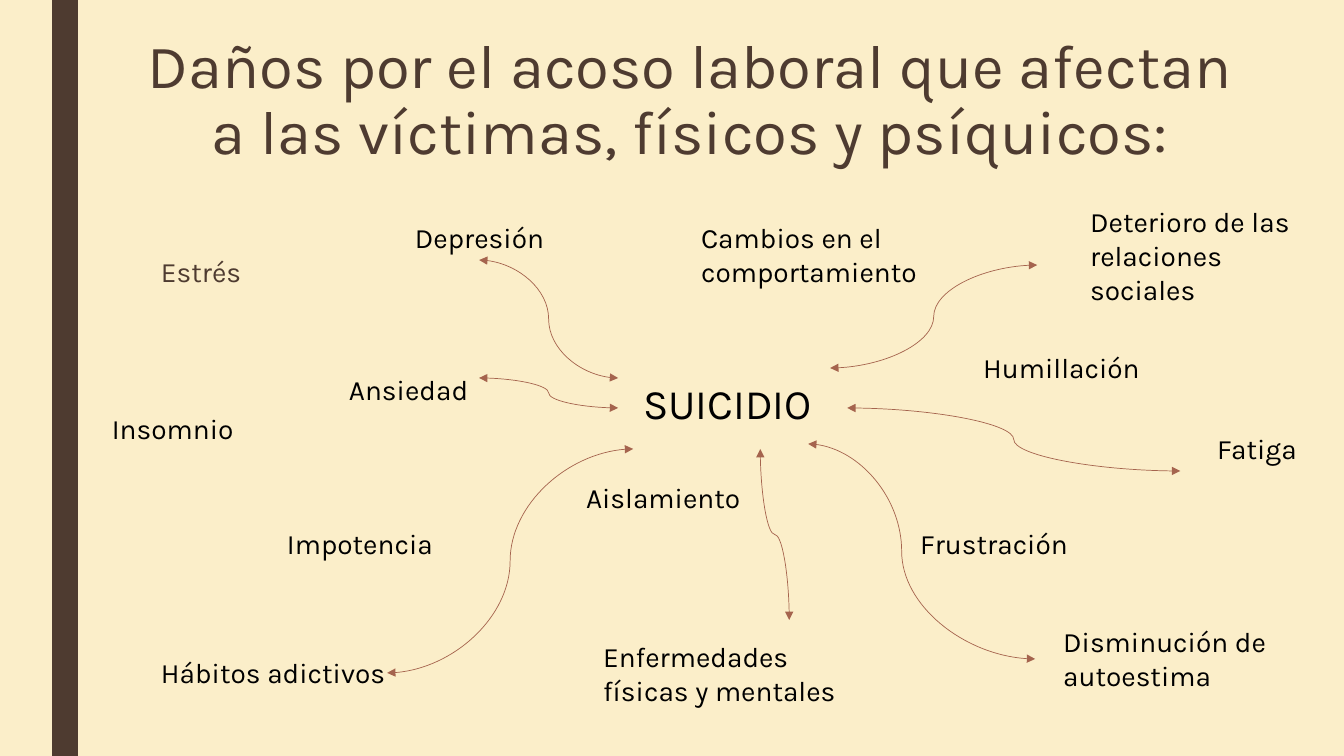
from lxml import etree
from pptx import Presentation
from pptx import util as u
from pptx.dml import color
from pptx.enum import shapes, text
from pptx.oxml import ns

COLORS = {"cream": "FBEEC9", "brown": "4E3B30", "rust": "A5644E", "black": "000000"}
WIDTH, HEIGHT = 1344, 756
LABEL_WIDTH = 254
LABELS = [
    ("Ansiedad", 339, 368),
    ("Humillación", 973, 346),
    ("Disminución de autoestima", 1053, 620),
    ("Fatiga", 1207, 427),
    ("Insomnio", 102, 407),
    ("Impotencia", 277, 522),
    ("Frustración", 910, 522),
    ("Depresión", 405, 216),
    ("Deterioro de las relaciones sociales", 1080, 200),
    ("Aislamiento", 576, 476),
    ("Cambios en el comportamiento", 691, 216),
    ("Hábitos adictivos", 151, 651),
    ("Enfermedades físicas y mentales", 593, 635),
]
CURVES = [
    ((479, 260), (618, 378)),
    ((1037, 265), (830, 368)),
    ((618, 408), (479, 378)),
    ((387, 673), (633, 449)),
    ((847, 408), (1180, 471)),
]


class Slide:
    def __init__(self, deck, font):
        self.page = deck.slides.add_slide(deck.slide_layouts[6])
        self.font = font
        fill = self.page.background.fill
        fill.solid()
        fill.fore_color.rgb = self.color("cream")

    def color(self, name):
        return color.RGBColor.from_string(COLORS[name])

    def px(self, *lengths):
        return [u.Emu(round(length * 914400 / 100.8)) for length in lengths]

    def bar(self, x, y, width, height):
        box = self.page.shapes.add_shape(
            shapes.MSO_SHAPE.RECTANGLE, *self.px(x, y, width, height))
        box.shadow.inherit = False
        box.fill.solid()
        box.fill.fore_color.rgb = self.color("brown")
        box.line.fill.background()

    def label(self, words, x, y, width=LABEL_WIDTH, height=44, size=20,
              ink="black", align=text.PP_ALIGN.LEFT, spacing=None):
        width = min(width, WIDTH - x)
        box = self.page.shapes.add_textbox(*self.px(x, y, width, height))
        box.text_frame.word_wrap = True
        para = box.text_frame.paragraphs[0]
        para.alignment = align
        para.line_spacing = spacing
        span = para.add_run()
        span.text = words
        span.font.name = self.font
        span.font.size = u.Pt(size)
        span.font.color.rgb = self.color(ink)

    def curve(self, begin, end, bend=None):
        line = self.page.shapes.add_connector(
            shapes.MSO_CONNECTOR.CURVE, *self.px(*begin, *end))
        line.line.color.rgb = self.color("rust")
        line.line.width = u.Pt(0.5)
        stroke = line.line._get_or_add_ln()
        for tip in ("a:headEnd", "a:tailEnd"):
            etree.SubElement(stroke, ns.qn(tip), type="triangle")
        properties = line._element.spPr
        etree.SubElement(properties, ns.qn("a:effectLst"))
        if bend:
            guides = properties.find(ns.qn("a:prstGeom")).get_or_add_avLst()
            etree.SubElement(guides, ns.qn("a:gd"), name="adj1", fmla=f"val {bend}")
        return line

    def upright_curve(self, begin, end):
        center_x, center_y = (begin[0] + end[0]) / 2, (begin[1] + end[1]) / 2
        half_length, half_breadth = (end[1] - begin[1]) / 2, (end[0] - begin[0]) / 2
        line = self.curve((center_x + half_length, center_y - half_breadth),
                          (center_x - half_length, center_y + half_breadth))
        line._element.spPr.find(ns.qn("a:xfrm")).set("rot", str(270 * 60000))


def main():
    deck = Presentation()
    deck.slide_width, deck.slide_height = u.Inches(13.33), u.Inches(7.5)
    slide = Slide(deck, "Karla")
    slide.bar(52, 0, 26, HEIGHT)
    slide.label("Daños por el acoso laboral que afectan a las víctimas, físicos y psíquicos:",
                114, 31, 1153, 163, 44, "brown", text.PP_ALIGN.CENTER, 0.89)
    slide.label("Estrés", 151, 252, 156, 57, ink="brown", spacing=0.94)
    for words, x, y in LABELS:
        slide.label(words, x, y)
    slide.label("SUICIDIO", 633, 373, height=61, size=30)
    for begin, end in CURVES:
        slide.curve(begin, end)
    slide.curve((1035, 659), (808, 444), bend=58800)
    slide.upright_curve((760, 449), (789, 620))
    deck.save("out.pptx")


if __name__ == "__main__":
    main()
